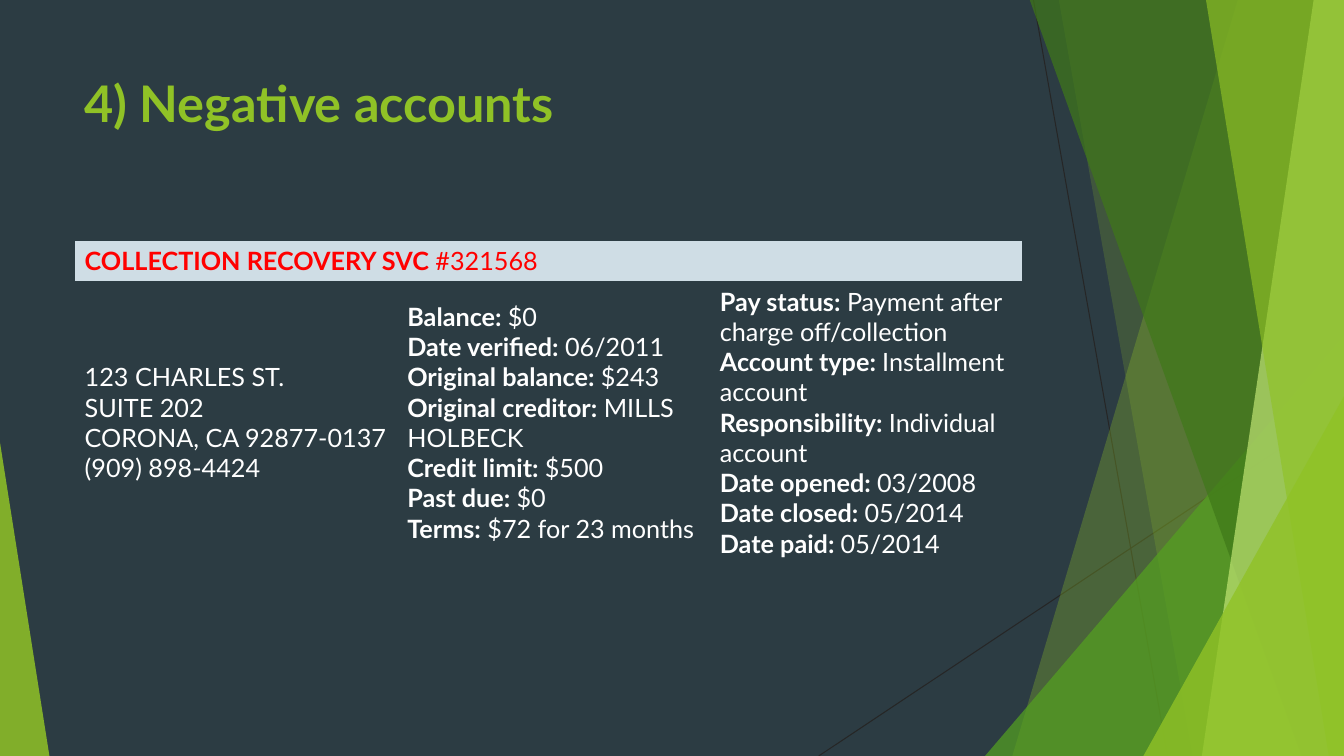
from lxml import etree
from pptx import Presentation
from pptx.dml.color import RGBColor
from pptx.enum import shapes, text
from pptx.oxml.ns import qn
from pptx.util import Inches, Pt

SLATE = RGBColor(0x2C, 0x3C, 0x43)
CHARCOAL = RGBColor(0x26, 0x26, 0x26)
LIME = RGBColor(0x90, 0xC2, 0x26)
GREEN = RGBColor(0x54, 0xA0, 0x21)
FOREST = RGBColor(0x3F, 0x78, 0x19)
PALE_LIME = RGBColor(0xC0, 0xE4, 0x74)
ICE = RGBColor(0xCF, 0xDD, 0xE5)
RED = RGBColor(0xFF, 0x00, 0x00)
WHITE = RGBColor(0xFF, 0xFF, 0xFF)
NO_TABLE_STYLE = "{2D5ABB26-0587-4C30-8999-92F81FD0307C}"
WIDTH, HEIGHT = 13.33, 7.5


def write(frame, lines, size=18, color=WHITE):
    """Write lines of (bold part, regular part) into one paragraph."""
    paragraph = frame.paragraphs[0]
    for number, parts in enumerate(lines):
        if number:
            paragraph.add_line_break()
        for words, bold in zip(parts, (True, False)):
            if words:
                run = paragraph.add_run()
                run.text = words
                run.font.name = "Lato"
                run.font.size = Pt(size)
                run.font.bold = bold
                run.font.color.rgb = color


def paint(shape, color, opacity):
    """Fill a shape with a translucent colour, without line or shadow."""
    shape.shadow.inherit = False
    shape.line.fill.background()
    shape.fill.solid()
    shape.fill.fore_color.rgb = color
    tint = shape._element.spPr.find(qn("a:solidFill"))[0]
    etree.SubElement(tint, qn("a:alpha")).set("val", str(opacity * 1000))


deck = Presentation()
deck.slide_width, deck.slide_height = Inches(WIDTH), Inches(HEIGHT)
slide = deck.slides.add_slide(deck.slide_layouts[6])
slide.background.fill.solid()
slide.background.fill.fore_color.rgb = SLATE

# Thin lines behind the facets
for start_x, start_y, end_x in [(10.25, 0, 11.58), (WIDTH, 4.03, 8.12)]:
    ray = slide.shapes.add_connector(
        shapes.MSO_CONNECTOR.STRAIGHT,
        Inches(start_x), Inches(start_y), Inches(end_x), Inches(HEIGHT))
    ray.line.color.rgb = CHARCOAL
    ray.line.width = Pt(0.75)
    etree.SubElement(ray._element.spPr, qn("a:effectLst"))

# Green facets, back to front: a band has a slanted left edge and runs to the
# right side of the slide; a corner is a right triangle on the bottom edge
facets = [
    ("band", 12.28, 10.04, LIME, 30),
    ("band", 10.5, 11.83, LIME, 20),
    ("corner", (9.77, 3.33, 3.56), 1, GREEN, 72),
    ("band", 10.21, 12.91, FOREST, 70),
    ("band", 13.03, 11.92, PALE_LIME, 70),
    ("band", 11.96, 13.18, LIME, 65),
    ("corner", (11.34, 3.93, 1.99), 1, LIME, 80),
    ("corner", (0, 4.39, 0.49), 0, LIME, 85),
]
for kind, first, second, color, opacity in facets:
    if kind == "band":
        outline = slide.shapes.build_freeform(Inches(first), Inches(-0.01))
        outline.add_line_segments(
            [(Inches(x), Inches(y)) for x, y in
             [(WIDTH, -0.01), (WIDTH, HEIGHT), (second, HEIGHT)]], close=True)
        facet = outline.convert_to_shape()
    else:
        left, top, width = first
        facet = slide.shapes.add_shape(
            shapes.MSO_SHAPE.ISOSCELES_TRIANGLE,
            Inches(left), Inches(top), Inches(width), Inches(HEIGHT - top))
        facet.adjustments[0] = second
    paint(facet, color, opacity)

# Title
title = slide.shapes.add_textbox(Inches(0.74), Inches(0.67), Inches(9.4), Inches(1.44))
title.text_frame.word_wrap = True
write(title.text_frame, [("4) Negative accounts", "")], size=36, color=LIME)

# Account table
account = slide.shapes.add_table(
    3, 3, Inches(0.74), Inches(2.39), Inches(9.4), Inches(3.9)).table
account._tbl.tblPr.find(qn("a:tableStyleId")).text = NO_TABLE_STYLE
account.first_row = account.horz_banding = False
for column, width in zip(account.columns, (3.2, 3.1, 3.1)):
    column.width = Inches(width)
for row, height in zip(account.rows, (0.4, 2.8, 0.7)):
    row.height = Inches(height)
for cell in account.iter_cells():
    cell.fill.background()
    cell.vertical_anchor = text.MSO_ANCHOR.MIDDLE
for row in (0, 2):
    account.cell(row, 0).merge(account.cell(row, 2))

creditor = account.cell(0, 0)
creditor.fill.solid()
creditor.fill.fore_color.rgb = ICE
write(creditor.text_frame, [("COLLECTION RECOVERY SVC", " #321568")], color=RED)

details = [
    [("", "123 CHARLES ST."),
     ("", "SUITE 202"),
     ("", "CORONA, CA 92877-0137"),
     ("", "(909) 898-4424")],
    [("Balance: ", "$0"),
     ("Date verified:", " 06/2011"),
     ("Original balance: ", "$243"),
     ("Original creditor:", " MILLS HOLBECK"),
     ("Credit limit: ", "$500"),
     ("Past due: ", "$0"),
     ("Terms:", " $72 for 23 months")],
    [("Pay status:", " Payment after charge off/collection"),
     ("Account type: ", "Installment account"),
     ("Responsibility: ", "Individual account"),
     ("Date opened: ", "03/2008"),
     ("Date closed: ", "05/2014"),
     ("Date paid: ", "05/2014")],
]
for column, lines in enumerate(details):
    write(account.cell(1, column).text_frame, lines)

deck.save("out.pptx")
